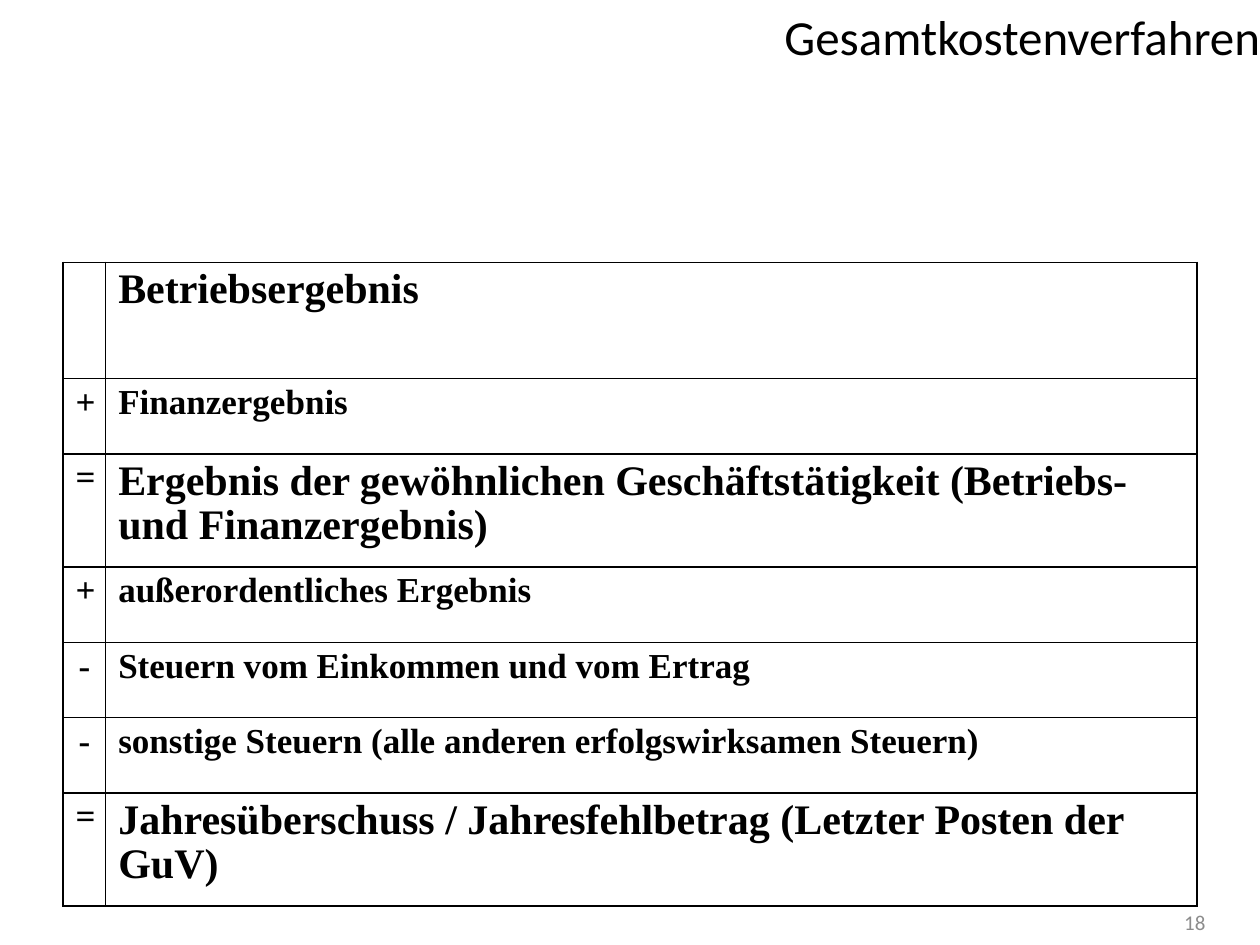
from lxml import etree
from pptx import Presentation
from pptx import util as u
from pptx.dml.color import RGBColor
from pptx.enum import text as t
from pptx.oxml import ns

BLACK = RGBColor(0, 0, 0)
WHITE = RGBColor(255, 255, 255)
GREY = RGBColor(0x8C, 0x8C, 0x8C)
SANS, SERIF = "Calibri", "Times New Roman"
LEFT, MID, RIGHT = t.PP_ALIGN.LEFT, t.PP_ALIGN.CENTER, t.PP_ALIGN.RIGHT

# Sign, label, text size, row height in cm
ROWS = [
    ("", "Betriebsergebnis", 24, 2.34),
    ("+", "Finanzergebnis", 20, 1.52),
    ("=", "Ergebnis der gewöhnlichen Geschäftstätigkeit "
          "(Betriebs- und Finanzergebnis)", 24, 2.28),
    ("+", "außerordentliches Ergebnis", 20, 1.52),
    ("-", "Steuern vom Einkommen und vom Ertrag", 20, 1.52),
    ("-", "sonstige Steuern (alle anderen erfolgswirksamen Steuern)", 20, 1.52),
    ("=", "Jahresüberschuss / Jahresfehlbetrag (Letzter Posten der GuV)",
     24, 2.28),
]


def write(frame, words, size=20, font=SERIF, color=BLACK, bold=False,
          align=LEFT, space=None):
    frame.word_wrap = True
    para = frame.paragraphs[0]
    para.alignment = align
    para.line_spacing = space
    if not words:
        para.font.size = u.Pt(size)
        return
    run = para.add_run()
    run.text = words
    run.font.size = u.Pt(size)
    run.font.name = font
    run.font.bold = bold
    run.font.color.rgb = color


def label(slide, box, words, **form):
    """Right-aligned, vertically centred line of text."""
    frame = slide.shapes.add_textbox(*map(u.Cm, box)).text_frame
    frame.vertical_anchor = t.MSO_ANCHOR.MIDDLE
    write(frame, words, font=SANS, align=RIGHT, **form)
    return frame


def border(cell):
    props = cell._tc.get_or_add_tcPr()
    for spot, side in enumerate(("lnL", "lnR", "lnT", "lnB")):
        line = etree.Element(ns.qn("a:" + side), w=str(u.Pt(1)))
        fill = etree.SubElement(line, ns.qn("a:solidFill"))
        etree.SubElement(fill, ns.qn("a:srgbClr"), val=str(BLACK))
        props.insert(spot, line)


def scheme(slide, box, sign=0.86):
    """Calculation table: narrow sign column, wide label column."""
    grid = slide.shapes.add_table(len(ROWS), 2, *map(u.Cm, box)).table
    grid.first_row = grid.horz_banding = False
    for col, wide in zip(grid.columns, (sign, box[2] - sign)):
        col.width = u.Cm(wide)
    for row, (mark, words, size, high) in zip(grid.rows, ROWS):
        row.height = u.Cm(high)
        parts = ((mark, 20, MID), (words, size, LEFT))
        for cell, (part, points, align) in zip(row.cells, parts):
            cell.fill.solid()
            cell.fill.fore_color.rgb = WHITE
            border(cell)
            write(cell.text_frame, part, size=points, bold=True,
                  align=align, space=0.95)


def main():
    deck = Presentation()
    deck.slide_width, deck.slide_height = u.Cm(25.4), u.Cm(19.05)
    slide = deck.slides.add_slide(deck.slide_layouts[6])

    # Title, flush with the right edge
    title = label(slide, (2.54, 0, 22.86, 1.45), "Gesamtkostenverfahren",
                  size=28)
    title.margin_right = 0

    # Table
    scheme(slide, (1.27, 5.29, 22.86, sum(row[3] for row in ROWS)))

    # Page number
    label(slide, (18.62, 18.08, 5.93, 1.02), "18", size=12, color=GREY)

    deck.save("out.pptx")


if __name__ == "__main__":
    main()
